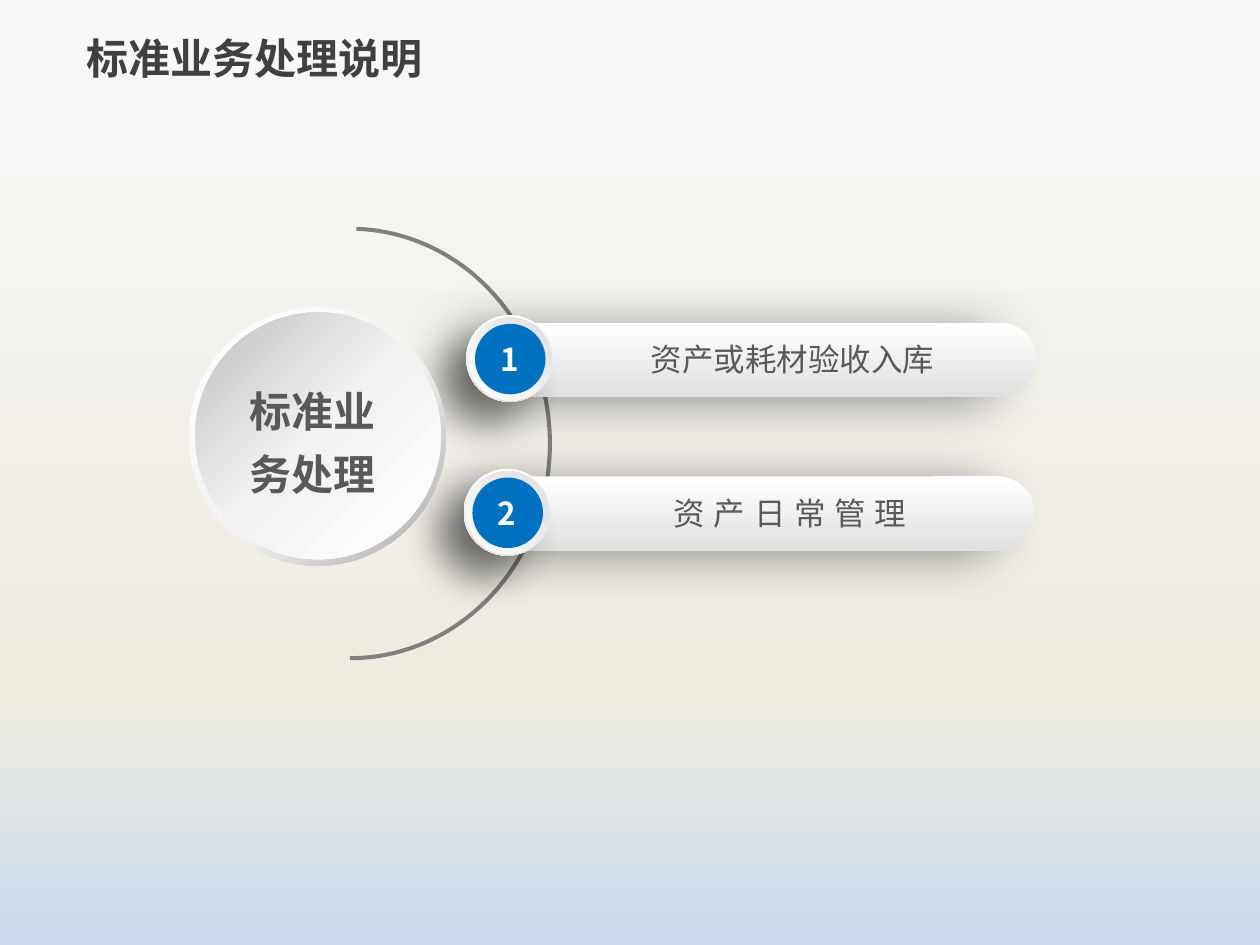
from dataclasses import dataclass
from typing import Optional

from lxml.etree import SubElement
from pptx import Presentation
from pptx.dml.color import RGBColor
from pptx.enum.shapes import MSO_SHAPE as Kind
from pptx.enum.text import MSO_ANCHOR as Anchor, MSO_AUTO_SIZE as Fit, PP_ALIGN as Align
from pptx.oxml.ns import qn
from pptx.util import Inches, Pt


@dataclass(frozen=True)
class Grad:
    stops: tuple[tuple[int, str], ...]
    angle: int


@dataclass(frozen=True)
class Shade:
    blur: int
    dist: int
    angle: int
    alpha: int = 40


@dataclass(frozen=True)
class Theme:
    back: Grad = Grad(((0, "F8F8F8"), (74, "EEECE1"), (100, "CAD9EB")), 90)
    pill: Grad = Grad(((0, "FFFFFF"), (100, "E0E0E0")), 90)
    bezel: Grad = Grad(((0, "FFFFFF"), (100, "DDDEDD")), 315)
    ring: Grad = Grad(((0, "FFFFFF"), (55, "F2F2F2"), (100, "A6A6A6")), 135)
    disc: Grad = Grad(((0, "FFFFFF"), (51, "F2F2F2"), (100, "BFBFBF")), 315)
    arc: str = "808080"
    blue: str = "0070C0"
    white: str = "FFFFFF"
    title: str = "404040"
    text: str = "595959"
    cjk: str = "Noto Sans CJK SC"
    big: int = 24
    small: int = 18


@dataclass(frozen=True)
class Item:
    num: str
    label: str
    left: float
    top: float


THEME = Theme()
ITEMS = (
    Item("1", "资产或耗材验收入库", 3.7, 2.5),
    Item("2", "资 产 日 常 管 理", 3.68, 3.72),
)


def blend(host, grad: Grad) -> None:
    """Swap the solid fill inside host for a linear gradient."""
    solid = host.find(qn("a:solidFill"))
    fill = host.makeelement(qn("a:gradFill"), {"rotWithShape": "1"})
    stops = SubElement(fill, qn("a:gsLst"))
    for place, tone in grad.stops:
        stop = SubElement(stops, qn("a:gs"), pos=str(place * 1000))
        SubElement(stop, qn("a:srgbClr"), val=tone)
    SubElement(fill, qn("a:lin"), ang=str(grad.angle * 60000), scaled="0")
    host.replace(solid, fill)


def cast(shape, shade: Shade) -> None:
    """Give the shape an outer black shadow."""
    effects = shape.element.spPr.find(qn("a:effectLst"))
    outer = SubElement(effects, qn("a:outerShdw"), blurRad=str(Pt(shade.blur)),
                       dist=str(Pt(shade.dist)), dir=str(shade.angle * 60000),
                       algn="ctr", rotWithShape="0")
    tone = SubElement(outer, qn("a:srgbClr"), val="000000")
    SubElement(tone, qn("a:alpha"), val=str(shade.alpha * 1000))


def draw(shapes, kind: Kind, box: tuple, fill: str | Grad, *, adj: tuple = (),
         flip: bool = False, turn: int = 0, shade: Optional[Shade] = None) -> None:
    shape = shapes.add_shape(kind, *map(Inches, box))
    shape.line.fill.background()
    shape.shadow.inherit = False
    shape.rotation = turn
    shape.fill.solid()
    if isinstance(fill, Grad):
        blend(shape.element.spPr, fill)
    else:
        shape.fill.fore_color.rgb = RGBColor.from_string(fill)
    for index, value in enumerate(adj):
        shape.adjustments[index] = value
    if flip:
        shape.element.spPr.find(qn("a:xfrm")).set("flipH", "1")
    if shade:
        cast(shape, shade)


def write(frame, text: str, *, size: int, tone: str, face: str, bold: bool = False,
          align: Align = Align.CENTER, space: Optional[float] = None) -> None:
    frame.word_wrap = True
    para = frame.paragraphs[0]
    para.alignment = align
    if space:
        para.line_spacing = space
    run = para.add_run()
    run.text = text
    font = run.font
    font.size, font.bold, font.name = Pt(size), bold, face
    font.color.rgb = RGBColor.from_string(tone)
    SubElement(run._r.get_or_add_rPr(), qn("a:ea"), typeface=face)


def label(shapes, box: tuple, text: str, **style) -> None:
    frame = shapes.add_textbox(*map(Inches, box)).text_frame
    write(frame, text, **style)
    frame.auto_size = Fit.SHAPE_TO_FIT_TEXT


def draw_item(slide, item: Item) -> None:
    """Draw a pill with its numbered badge; item gives the badge's corner."""
    group = slide.shapes.add_group_shape().shapes

    def at(dx: float, dy: float, wide: float, high: float) -> tuple:
        return item.left + dx, item.top + dy, wide, high

    draw(group, Kind.ROUNDED_RECTANGLE, at(0.15, 0.06, 4.38, 0.59), THEME.pill,
         adj=(0.5,), flip=True, shade=Shade(30, 20, 171))
    draw(group, Kind.OVAL, at(0, 0, 0.69, 0.69), THEME.pill, shade=Shade(22, 20, 135))
    draw(group, Kind.OVAL, at(0.02, 0.02, 0.66, 0.66), THEME.bezel)
    draw(group, Kind.OVAL, at(0.07, 0.07, 0.56, 0.56), THEME.blue)
    label(group, at(0.12, 0.15, 0.45, 0.4), item.num, size=THEME.small,
          tone=THEME.white, face=THEME.cjk, bold=True)
    label(group, at(1.23, 0.15, 2.72, 0.4), item.label, size=THEME.small,
          tone=THEME.text, face="Arial")


def draw_hub(slide) -> None:
    group = slide.shapes.add_group_shape().shapes
    draw(group, Kind.DONUT, (1.5, 2.44, 2.04, 2.05), THEME.ring, adj=(0.05,), flip=True)
    draw(group, Kind.OVAL, (1.55, 2.48, 1.95, 1.96), THEME.disc, flip=True)
    label(group, (1.77, 2.91, 1.42, 1.07), "标准业务处理", size=THEME.big,
          tone=THEME.text, face="Calibri", bold=True, space=1.25)


def set_title(slide, text: str) -> None:
    title = slide.shapes.title
    title.left, title.top, title.width, title.height = map(Inches, (0.59, 0.12, 8.89, 0.67))
    title.text_frame.vertical_anchor = Anchor.MIDDLE
    write(title.text_frame, text, size=THEME.big, tone=THEME.title, face=THEME.cjk,
          bold=True, align=Align.LEFT)


def main() -> None:
    deck = Presentation()
    deck.slide_width, deck.slide_height = Inches(10), Inches(7.5)
    slide = deck.slides.add_slide(deck.slide_layouts[5])
    slide.background.fill.solid()
    blend(slide.element.xpath(".//p:bgPr")[0], THEME.back)
    set_title(slide, "标准业务处理说明")
    draw(slide.shapes, Kind.BLOCK_ARC, (1.06, 1.92, 3.44, 3.2), THEME.arc,
         adj=(108.97, 0.07, 0.01), turn=90)
    for item in ITEMS:
        draw_item(slide, item)
    draw_hub(slide)
    deck.save("out.pptx")


if __name__ == "__main__":
    main()
